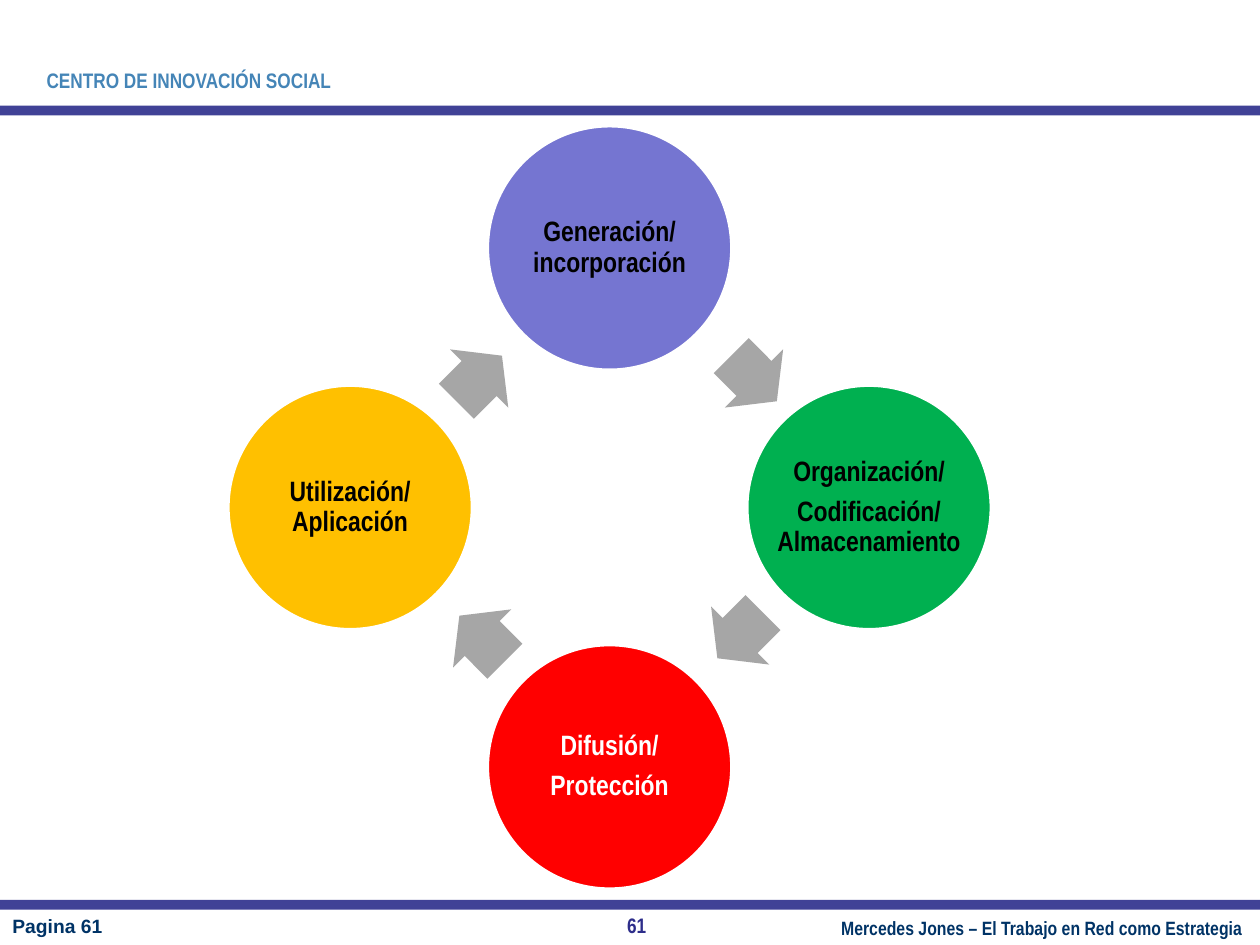
from dataclasses import dataclass
import math

import pptx
import pptx.dml.color
import pptx.enum.shapes
import pptx.enum.text
import pptx.util

Cm, Pt = pptx.util.Cm, pptx.util.Pt
SHAPE = pptx.enum.shapes.MSO_SHAPE
ALIGN = pptx.enum.text.PP_ALIGN
ANCHOR = pptx.enum.text.MSO_ANCHOR

COLOURS = {
    "bar": "404296",
    "header": "4585B7",
    "footer": "003366",
    "number": "2D2D8A",
    "arrow": "A6A6A6",
    "violet": "7575D1",
    "green": "00B050",
    "red": "FF0000",
    "amber": "FFC000",
    "black": "000000",
    "white": "FFFFFF",
}
CENTRE_X, CENTRE_Y = 12.29, 10.23
ORBIT = 5.23
DIAMETER = 4.93
ARROW_LENGTH, ARROW_WIDTH = 1.3, 1.66


@dataclass
class Stage:
    """A circle of the cycle and the centre of the arrow that leaves it, in cm."""
    paragraphs: list[str]
    fill: str
    ink: str
    arrow_x: float
    arrow_y: float


@dataclass
class Label:
    text: str
    bounds: tuple[float, float, float, float]
    size: int
    colour: str
    align: ALIGN = ALIGN.LEFT
    anchor: ANCHOR = ANCHOR.MIDDLE
    font: str = "Arial Narrow"


STAGES = [
    Stage(["Generación/\vincorporación"], "violet", "black", 15.2, 7.63),
    Stage(["Organización/", "Codificación/\vAlmacenamiento"],
          "green", "black", 14.92, 12.81),
    Stage(["Difusión/", "Protección"], "red", "white", 9.72, 12.87),
    Stage(["Utilización/\vAplicación"], "amber", "black", 9.66, 7.63),
]
LABELS = [
    Label("CENTRO DE INNOVACIÓN SOCIAL", (0.69, 0.91, 6.3, 1.42), 12, "header"),
    Label("Mercedes Jones – El Trabajo en Red como Estrategia",
          (12.7, 18.34, 12.6, 0.79), 11, "footer", ALIGN.RIGHT, ANCHOR.TOP),
    Label("Pagina 61", (0, 18.26, 2.9, 0.79), 11, "footer", font="Arial"),
    Label("61", (12.29, 18.26, 1.09, 0.79), 12, "number", ALIGN.CENTER),
]
BAR_TOPS = [2.13, 18.14]


def rgb(name: str) -> pptx.dml.color.RGBColor:
    return pptx.dml.color.RGBColor.from_string(COLOURS[name])


def set_attributes(target, values: dict) -> None:
    for name, value in values.items():
        setattr(target, name, value)


def style_text(para, size: int, colour: str, font: str = "Arial Narrow") -> None:
    set_attributes(para.font, {"name": font, "size": Pt(size), "bold": True})
    para.font.color.rgb = rgb(colour)


def add_filled(slide, kind, bounds: tuple, colour: str):
    """Add a preset shape in one plain colour, without line or shadow."""
    shape = slide.shapes.add_shape(kind, *map(Cm, bounds))
    shape.shadow.inherit = False
    shape.fill.solid()
    shape.fill.fore_color.rgb = rgb(colour)
    shape.line.fill.background()
    return shape


def add_stage(slide, stage: Stage, index: int) -> None:
    """Place a circle on the orbit, clockwise from the top, and its arrow."""
    angle = index * math.pi / 2
    left = CENTRE_X + ORBIT * math.sin(angle) - DIAMETER / 2
    top = CENTRE_Y - ORBIT * math.cos(angle) - DIAMETER / 2
    circle = add_filled(slide, SHAPE.OVAL, (left, top, DIAMETER, DIAMETER), stage.fill)
    circle.line.color.rgb = rgb("white")
    circle.line.width = Pt(2)

    frame = circle.text_frame
    inset = Cm(0.05)
    set_attributes(frame, {
        "word_wrap": False, "vertical_anchor": ANCHOR.MIDDLE,
        "margin_left": inset, "margin_right": inset,
        "margin_top": inset, "margin_bottom": inset,
    })
    frame.text = "\n".join(stage.paragraphs)
    for para in frame.paragraphs:
        set_attributes(para, {"alignment": ALIGN.CENTER, "line_spacing": 0.9,
                              "space_after": Pt(5.6)})
        style_text(para, 16, stage.ink)

    bounds = (stage.arrow_x - ARROW_LENGTH / 2, stage.arrow_y - ARROW_WIDTH / 2,
              ARROW_LENGTH, ARROW_WIDTH)
    arrow = add_filled(slide, SHAPE.RIGHT_ARROW, bounds, "arrow")
    arrow.rotation = 45 + 90 * index
    arrow.adjustments[0] = 0.6
    arrow.adjustments[1] = 0.5


def add_label(slide, label: Label) -> None:
    box = slide.shapes.add_textbox(*map(Cm, label.bounds))
    frame = box.text_frame
    set_attributes(frame, {"word_wrap": True, "vertical_anchor": label.anchor})
    para = frame.paragraphs[0]
    para.text = label.text
    para.alignment = label.align
    style_text(para, label.size, label.colour, label.font)


def main() -> None:
    deck = pptx.Presentation()
    set_attributes(deck, {"slide_width": Cm(25.4), "slide_height": Cm(19.05)})
    slide = deck.slides.add_slide(deck.slide_layouts[6])
    for top in BAR_TOPS:
        add_filled(slide, SHAPE.RECTANGLE, (0, top, 25.4, 0.2), "bar")
    for index, stage in enumerate(STAGES):
        add_stage(slide, stage, index)
    for label in LABELS:
        add_label(slide, label)
    deck.save("out.pptx")


if __name__ == "__main__":
    main()
